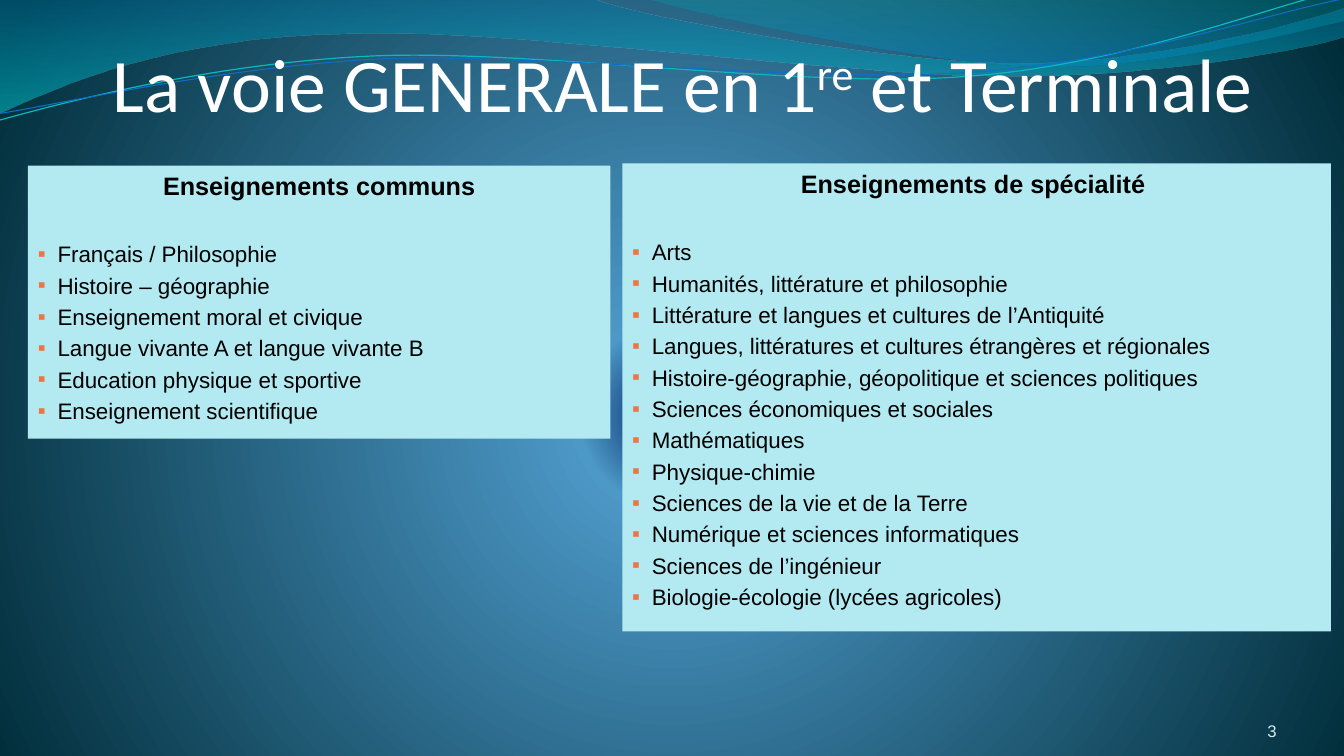
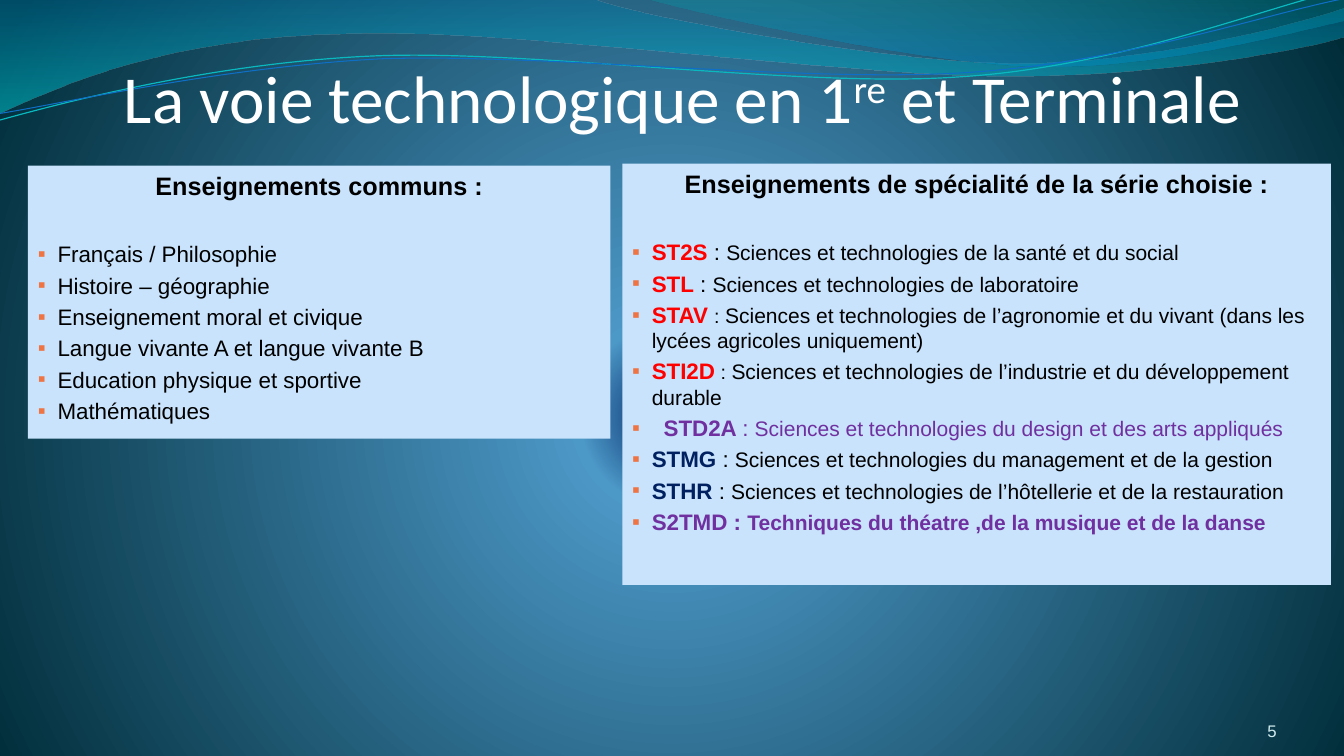
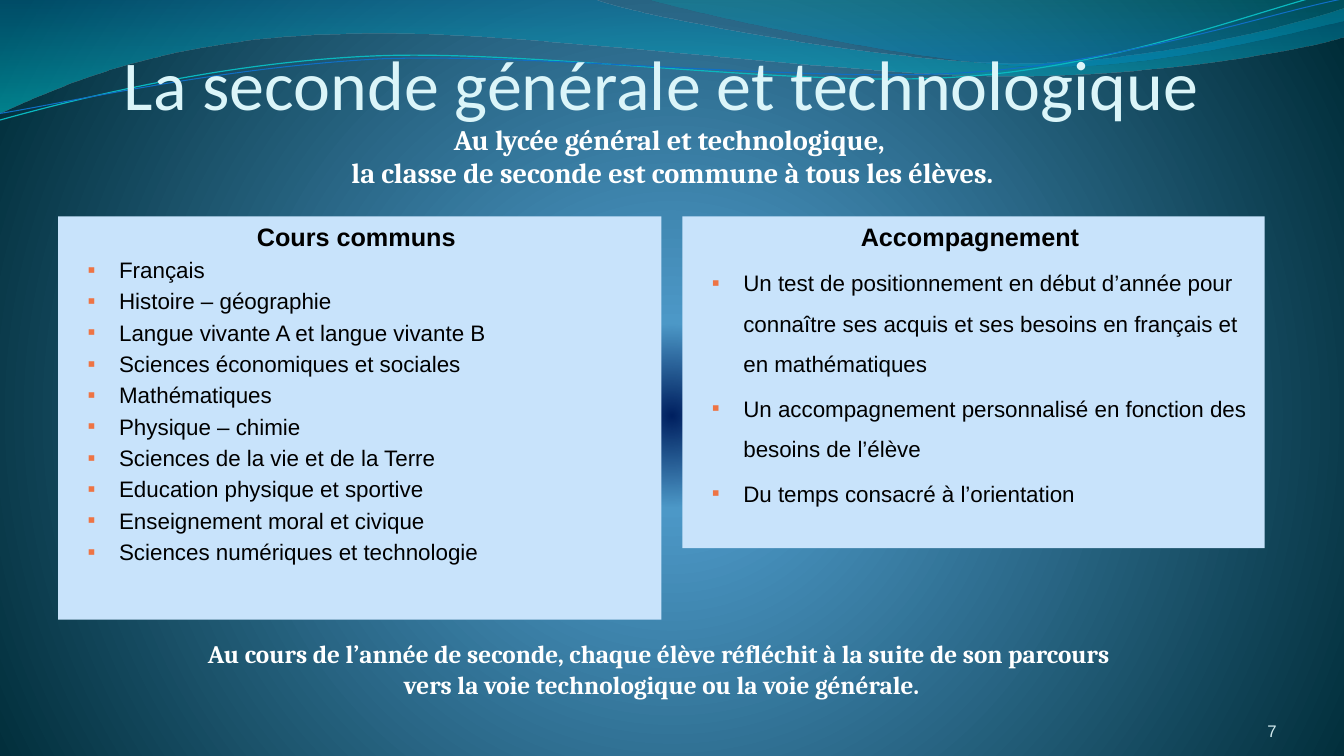
from pptx import Presentation
from pptx.dml.color import RGBColor
from pptx.enum.shapes import MSO_SHAPE
from pptx.enum.text import MSO_ANCHOR, MSO_AUTO_SIZE, PP_ALIGN
from pptx.oxml import parse_xml
from pptx.oxml.ns import nsdecls, qn
from pptx.util import Pt
from lxml.etree import SubElement

WHITE = RGBColor(0xFF, 0xFF, 0xFF)
BLACK = RGBColor(0x00, 0x00, 0x00)
RED = RGBColor(0xFF, 0x00, 0x00)
NAVY = RGBColor(0x00, 0x20, 0x60)
PLUM = RGBColor(0x70, 0x30, 0xA0)
ICE = RGBColor(0xDB, 0xF5, 0xF9)
MIST = RGBColor(0xD1, 0xEA, 0xEE)
AQUA = RGBColor(0xB3, 0xEA, 0xF2)
SKY = RGBColor(0xC8, 0xE3, 0xFB)
CORAL = RGBColor(0xEE, 0x74, 0x44)
TEAL = RGBColor(0x0A, 0xB8, 0xBF)
BLUE = RGBColor(0x0F, 0x6F, 0xC6)
GLOW = RGBColor(0x4C, 0x98, 0xC7)
DEEP = RGBColor(0x00, 0x2C, 0x38)
SEA = RGBColor(0x00, 0x74, 0xA1)
CYAN = RGBColor(0x00, 0xC6, 0xCF)
LAKE = RGBColor(0x00, 0xA1, 0xA9)
AZURE = RGBColor(0x00, 0x8B, 0xBF)

TITLE_ONLY, CONTENT = 5, 1
GAP = 25.1
DOWN = '<a:lin ang="5400000" scaled="1"/>'
ROUND = ('<a:path path="circle"><a:fillToRect l="10000" t="110000" '
         'r="10000" b="100000"/></a:path>')

BANDS = [
    ([(0, 0), (422.6, -0.7), (456.5, 12.2, 637.2, 45.4, 727.9, 45.4),
      (819.4, 45.4, 920.2, 18.7, 960, 6.5), (961.2, 25.9),
      (943.9, 31.7, 835.2, 54.7, 715.7, 54),
      (596.9, 54, 366.5, 20.2, 247, 24.5),
      (123.1, 25.9, 43.9, 59.8, -0.7, 81.4)],
     [(0, SEA, 45), (100, CYAN, 55)]),
    ([(460.1, -0.7), (488.9, 7.9, 654.5, 44.6, 738, 46.8),
      (821.5, 49.7, 923, 23, 960, 15.1), (960, 0)],
     [(0, LAKE, 30), (80, AZURE, 45)]),
]
LINES = [
    ([(-0.7, 85.7), (46.1, 72.7, 151.9, 44.6, 265.7, 39.6),
      (379.4, 34.6, 568.8, 62.6, 684, 54.7),
      (799.2, 47.5, 901.4, 5.8, 958.3, -7.2)], TEAL, 0.85),
    ([(0, 80.6), (45.4, 74.2, 157, 47.5, 272.2, 42.5),
      (386.6, 38.2, 573.1, 59, 687.6, 51.8),
      (802.8, 44.6, 903.6, 10.1, 960.5, -1.4)], BLUE, 0.75),
]

CORE = ["Français / Philosophie", "Histoire – géographie",
        "Enseignement moral et civique",
        "Langue vivante A et langue vivante B",
        "Education physique et sportive"]
MAJORS = ["Arts", "Humanités, littérature et philosophie",
          "Littérature et langues et cultures de l’Antiquité",
          "Langues, littératures et cultures étrangères et régionales",
          "Histoire-géographie, géopolitique et sciences politiques",
          "Sciences économiques et sociales", "Mathématiques",
          "Physique-chimie", "Sciences de la vie et de la Terre",
          "Numérique et sciences informatiques", "Sciences de l’ingénieur",
          "Biologie-écologie (lycées agricoles)"]
SHARED = ["Français", "Histoire – géographie",
          "Langue vivante A et langue vivante B",
          "Sciences économiques et sociales", "Mathématiques",
          "Physique – chimie", "Sciences de la vie et de la Terre",
          "Education physique et sportive", "Enseignement moral et civique",
          "Sciences numériques et technologie"]
HELP = ["Un test de positionnement en début d’année pour connaître ses acquis "
        "et ses besoins en français et en mathématiques",
        "Un accompagnement personnalisé en fonction des besoins de l’élève",
        "Du temps consacré à l’orientation"]


def grad(item, stops, way):
    """Replace the gradient of a shape or master by the given stops."""
    marks = "".join(
        f'<a:gs pos="{at * 1000}"><a:srgbClr val="{hue}">'
        f'<a:alpha val="{alpha * 1000}"/></a:srgbClr></a:gs>'
        for at, hue, alpha in stops)
    old = next(item.element.iter(qn("a:gradFill")))
    old.getparent().replace(old, parse_xml(
        f'<a:gradFill {nsdecls("a")} rotWithShape="1">'
        f'<a:gsLst>{marks}</a:gsLst>{way}</a:gradFill>'))


def bend(shape, steps):
    """Join each three segments of a curve step into one cubic curve."""
    legs = iter(list(shape.element.iter(qn("a:lnTo"))))
    for step in steps[1:]:
        group = [next(legs) for n in range(len(step) // 2)]
        if len(group) == 3:
            group[0].addprevious(
                parse_xml(f'<a:cubicBezTo {nsdecls("a")}/>'))
            curve = group[0].getprevious()
            for leg in group:
                curve.append(leg[0])
                leg.getparent().remove(leg)


def wave(slide, steps, close):
    """Draw a curved outline without shadow."""
    spots = [step[n:n + 2] for step in steps for n in range(0, len(step), 2)]
    form = slide.shapes.build_freeform(*spots[0], scale=float(Pt(1)))
    form.add_line_segments(spots[1:], close=close)
    shape = form.convert_to_shape()
    bend(shape, steps)
    shape.shadow.inherit = False
    return shape


def theme(deck, slide):
    """Give the slide master its background and its waves."""
    master = deck.slide_master
    master.background.fill.gradient()
    grad(master, [(0, NAVY, 100), (12, GLOW, 100), (100, DEEP, 100)], ROUND)
    waves = []
    for steps, stops in BANDS:
        band = wave(slide, steps, True)
        band.fill.gradient()
        grad(band, stops, DOWN)
        band.line.fill.background()
        waves.append(band)
    for steps, hue, width in LINES:
        line = wave(slide, steps, False)
        line.fill.background()
        line.line.color.rgb = hue
        line.line.width = Pt(width)
        waves.append(line)
    for n, shape in enumerate(waves):
        shape.element.nvSpPr.cNvPr.set("id", str(20 + n))
        master.shapes.element.insert(2 + n, shape.element)


def place(shape, box):
    """Set left, top, width and height in points."""
    shape.left, shape.top, shape.width, shape.height = map(Pt, box)


def frame(shape, anchor=MSO_ANCHOR.TOP, pads=(7.2, 3.6, 7.2, 3.6)):
    """Prepare the text frame of a shape and return it."""
    text = shape.text_frame
    text.word_wrap = True
    text.auto_size = MSO_AUTO_SIZE.NONE
    text.vertical_anchor = anchor
    (text.margin_left, text.margin_top,
     text.margin_right, text.margin_bottom) = map(Pt, pads)
    return text


def write(para, text, size, hue=BLACK, bold=False, face="Arial"):
    """Add one formatted run."""
    run = para.add_run()
    run.text = text
    font = run.font
    font.name, font.size, font.bold = face, Pt(size), bold
    font.color.rgb = hue
    return run


def lead(para, left=0, hang=0, bullet=False):
    """Set indents, space before and bullet of a paragraph."""
    props = para._p.get_or_add_pPr()
    props.set("marL", str(Pt(left)))
    props.set("indent", str(-Pt(hang)))
    space = SubElement(props, qn("a:spcBef"))
    SubElement(space, qn("a:spcPct")).set("val", "20000")
    if bullet:
        tint = SubElement(props, qn("a:buClr"))
        SubElement(tint, qn("a:srgbClr")).set("val", str(CORAL))
        SubElement(props, qn("a:buFont")).set("typeface", "Arial")
        SubElement(props, qn("a:buChar")).set("char", "▪")
    else:
        SubElement(props, qn("a:buNone"))


def title(slide, box, size, parts, hue=WHITE):
    """Fill the title, raising every second part."""
    shape = slide.shapes.title
    place(shape, box)
    para = frame(shape, MSO_ANCHOR.BOTTOM, (0, 3.6, 0, 0)).paragraphs[0]
    para.alignment = PP_ALIGN.CENTER
    for n, part in enumerate(parts):
        run = write(para, part, size, hue, face="Calibri")
        if n % 2:
            run._r.get_or_add_rPr().set("baseline", "30000")


def number(slide, value):
    """Write the page number at the bottom right."""
    box = slide.shapes.add_textbox(*map(Pt, (832, 500.4, 80, 28.8)))
    para = frame(box, MSO_ANCHOR.BOTTOM, (0, 0, 0, 0)).paragraphs[0]
    para.alignment = PP_ALIGN.RIGHT
    write(para, str(value), 12, MIST)


def panel(slide, box, fill, head, items, gap=0, left=14, hang=14,
          pitch=None):
    """Draw a filled panel with a heading and a bulleted list."""
    shape = slide.shapes.add_shape(MSO_SHAPE.RECTANGLE, *map(Pt, box))
    shape.shadow.inherit = False
    shape.fill.solid()
    shape.fill.fore_color.rgb = fill
    shape.line.fill.background()
    text = frame(shape)
    para = text.paragraphs[0]
    lead(para)
    para.alignment = PP_ALIGN.CENTER
    if gap:
        para.space_after = Pt(gap)
    write(para, head, 18, bold=True)
    for item in items:
        para = text.add_paragraph()
        para.alignment = PP_ALIGN.LEFT
        runs, shift = ([(item, 16)], 0) if isinstance(item, str) else item
        lead(para, left + shift, hang + shift, True)
        if pitch:
            para.line_spacing = pitch
        for run in runs:
            write(para, *run)


def track(code, hue, name, tone=BLACK, colon=16, bold=False, shift=0):
    """Return the runs and extra indent of one series."""
    mark = ": " if code.endswith(" ") else " : "
    return [(code, 16, hue, True), (mark, colon, tone, bold),
            (name, 15, tone, bold)], shift


def centre(text, lines, size, pitch=None):
    """Write centred bold lines into a text frame."""
    for n, line in enumerate(lines):
        para = text.add_paragraph() if n else text.paragraphs[0]
        if pitch:
            lead(para)
            para.line_spacing = pitch
        para.alignment = PP_ALIGN.CENTER
        write(para, line, size, WHITE, True, "Cambria")


def general(slide):
    """Build the slide on the general path."""
    title(slide, (26.6, 28, 922.3, 63.4), 54,
          ["La voie GENERALE en 1", "re", " et Terminale"])
    panel(slide, (20, 118.3, 416, 195), AQUA, "Enseignements communs",
          CORE + ["Enseignement scientifique"], GAP)
    panel(slide, (444.5, 116.8, 506.2, 334.2), AQUA,
          "Enseignements de spécialité ", MAJORS, GAP)
    number(slide, 3)


def techno(slide):
    """Build the slide on the technological path."""
    title(slide, (26.4, 28, 922.3, 69.8), 48,
          ["La voie technologique en 1", "re", " et Terminale"])
    panel(slide, (20, 118.3, 416, 195), SKY, "Enseignements communs :",
          CORE + ["Mathématiques"], GAP)
    root = "Sciences et technologies "
    tracks = [
        track("ST2S", RED, root + "de la santé et du social"),
        track("STL", RED, root + "de laboratoire"),
        track("STAV ", RED, root + "de l’agronomie et du vivant "
              "(dans les lycées agricoles uniquement)", colon=14),
        track("STI2D", RED, root + "de l’industrie et du développement "
              "durable", colon=14),
        track("STD2A ", PLUM, root + "du design et des arts appliqués",
              PLUM, shift=8.5),
        track("STMG ", NAVY, root + "du management et de la gestion"),
        track("STHR", NAVY, root + "de l’hôtellerie et de la restauration"),
        track("S2TMD", PLUM, "Techniques du théatre ,de la musique et de la "
              "danse", PLUM, bold=True),
    ]
    panel(slide, (444.5, 116.8, 506.2, 301), SKY,
          "Enseignements de spécialité de la série choisie :", tracks, GAP)
    number(slide, 5)


def second(slide):
    """Build the slide on the shared first year."""
    title(slide, (15.1, 17.3, 915, 72), 50,
          ["La seconde générale et technologique"], ICE)
    body = slide.placeholders[1]
    place(body, (162.7, 88.6, 635, 50.4))
    centre(frame(body), ["Au lycée général et technologique, ",
                         "la classe de seconde est commune à tous les élèves."],
           20.2, 0.8)
    panel(slide, (487.4, 154.6, 416, 237), SKY, "Accompagnement ", HELP,
          left=36.5, hang=22.5, pitch=1.5)
    note = slide.shapes.add_textbox(*map(Pt, (41.8, 452.6, 861.8, 51.1)))
    centre(frame(note), ["Au cours de l’année de seconde, chaque élève "
                         "réfléchit à la suite de son parcours ",
                         "vers la voie technologique ou la voie générale."],
           18)
    panel(slide, (41.5, 154.6, 431, 288), SKY, "Cours communs ", SHARED,
          left=36.5, hang=22.5)
    number(slide, 7)


def main():
    """Build and save the deck."""
    deck = Presentation()
    deck.slide_width, deck.slide_height = Pt(960), Pt(540)
    plan = [(general, TITLE_ONLY), (techno, TITLE_ONLY), (second, CONTENT)]
    for n, (build, kind) in enumerate(plan):
        slide = deck.slides.add_slide(deck.slide_layouts[kind])
        if n == 0:
            theme(deck, slide)
        build(slide)
    deck.save("out.pptx")


if __name__ == "__main__":
    main()
